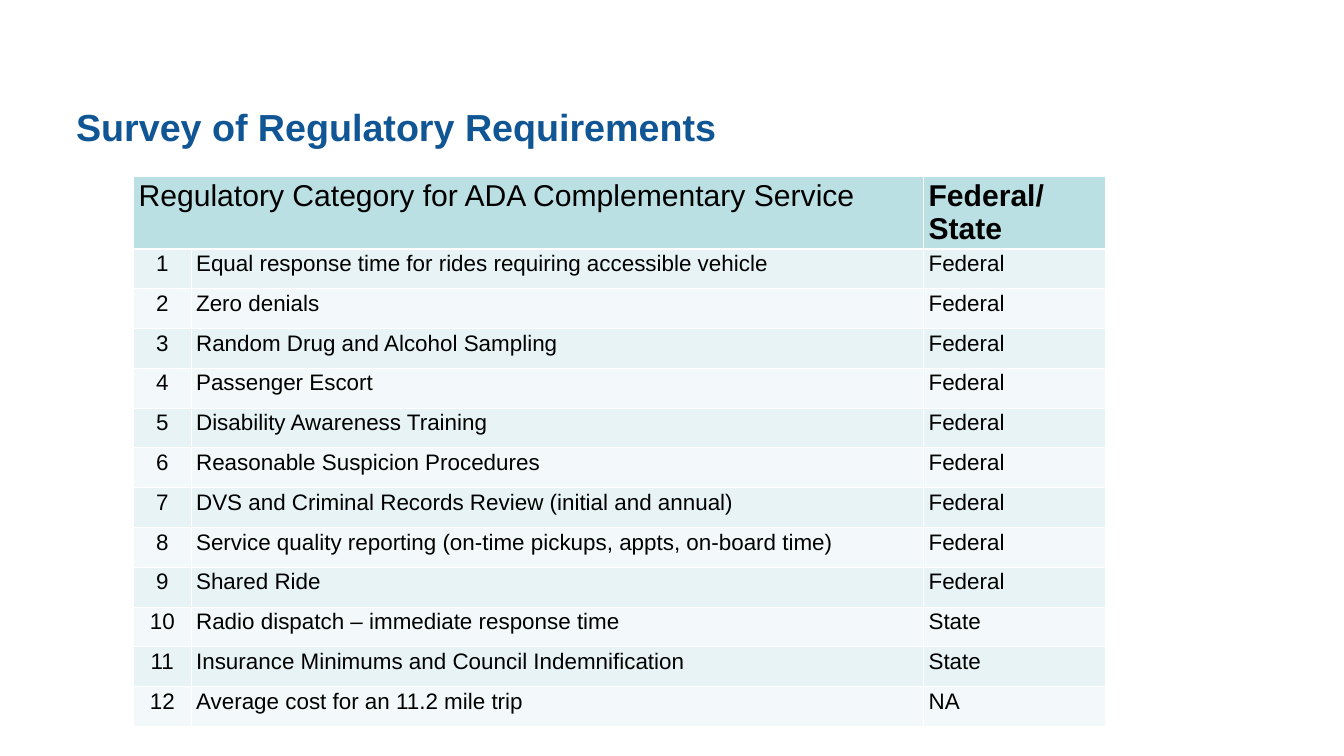
from lxml import etree
from pptx import Presentation
from pptx.dml.color import RGBColor
from pptx.enum import text
from pptx.oxml.ns import qn
from pptx.util import Inches, Pt

THEME = {
    "font": "Arial",
    "title": "105594", "ink": "000000", "line": "FFFFFF",
    "header": "BBE0E3", "bands": ("E7F3F4", "F3F9FA"),
    "title_size": 53.8, "header_size": 43, "body_size": 32,
    "line_width": 1, "rule_width": 3,
}
TITLE = "Survey of Regulatory Requirements"
HEADER = ("Regulatory Category for ADA Complementary Service", "", "Federal/State")
REQUIREMENTS = [
    ("Equal response time for rides requiring accessible vehicle", "Federal"),
    ("Zero denials", "Federal"),
    ("Random Drug and Alcohol Sampling", "Federal"),
    ("Passenger Escort", "Federal"),
    ("Disability Awareness Training", "Federal"),
    ("Reasonable Suspicion Procedures", "Federal"),
    ("DVS and Criminal Records Review (initial and annual)", "Federal"),
    ("Service quality reporting (on-time pickups, appts, on-board time)", "Federal"),
    ("Shared Ride", "Federal"),
    ("Radio dispatch – immediate response time", "State"),
    ("Insurance Minimums and Council Indemnification", "State"),
    ("Average cost for an 11.2 mile trip", "NA"),
]
COLUMNS = (1.14, 14.53, 3.61)
HEADER_HEIGHT, ROW_HEIGHT = 0.85, 0.79


def style(p, size, color, bold, align=text.PP_ALIGN.LEFT):
    p.alignment = align
    p.font.name = THEME["font"]
    p.font.size = Pt(size)
    p.font.bold = bold
    p.font.color.rgb = RGBColor.from_string(color)


def add_borders(cell, top, bottom):
    tc_pr = cell._tc.get_or_add_tcPr()
    side = THEME["line_width"]
    for tag, width in (("a:lnL", side), ("a:lnR", side), ("a:lnT", top), ("a:lnB", bottom)):
        ln = etree.SubElement(tc_pr, qn(tag), w=str(Pt(width)))
        fill = etree.SubElement(ln, qn("a:solidFill"))
        etree.SubElement(fill, qn("a:srgbClr"), val=THEME["line"])


def add_title(s):
    sp = s.shapes.title
    sp.left, sp.top, sp.width, sp.height = map(Inches, (1.33, 1.77, 23.99, 1.48))
    tf = sp.text_frame
    tf.text = TITLE
    tf.word_wrap = True
    tf.auto_size = text.MSO_AUTO_SIZE.NONE
    tf.vertical_anchor = text.MSO_ANCHOR.MIDDLE
    tf.margin_left = tf.margin_right = Inches(0.18)
    tf.margin_top = tf.margin_bottom = Inches(0.09)
    style(tf.paragraphs[0], THEME["title_size"], THEME["title"], True)


def add_requirements(s):
    rows = [HEADER] + [(str(n), *row) for n, row in enumerate(REQUIREMENTS, 1)]
    height = HEADER_HEIGHT + ROW_HEIGHT * len(REQUIREMENTS)
    table = s.shapes.add_table(len(rows), len(COLUMNS), Inches(2.65), Inches(3.5),
                               Inches(sum(COLUMNS)), Inches(height)).table
    for column, width in zip(table.columns, COLUMNS):
        column.width = Inches(width)
    for i, row in enumerate(rows):
        header = i == 0
        table.rows[i].height = Inches(HEADER_HEIGHT if header else ROW_HEIGHT)
        color = THEME["header"] if header else THEME["bands"][(i - 1) % 2]
        size = THEME["header_size"] if header else THEME["body_size"]
        top = THEME["rule_width"] if i == 1 else THEME["line_width"]
        bottom = THEME["rule_width"] if header else THEME["line_width"]
        for j, value in enumerate(row):
            cell = table.cell(i, j)
            cell.text = value
            add_borders(cell, top, bottom)
            cell.fill.solid()
            cell.fill.fore_color.rgb = RGBColor.from_string(color)
            centred = j == 0 and not header
            style(cell.text_frame.paragraphs[0], size, THEME["ink"], header and j == 2,
                  text.PP_ALIGN.CENTER if centred else text.PP_ALIGN.LEFT)
    table.cell(0, 0).merge(table.cell(0, 1))


def main():
    prs = Presentation()
    prs.slide_width, prs.slide_height = Inches(26.66), Inches(15)
    s = prs.slides.add_slide(prs.slide_layouts[5])
    add_requirements(s)
    add_title(s)
    prs.save("out.pptx")


if __name__ == "__main__":
    main()
